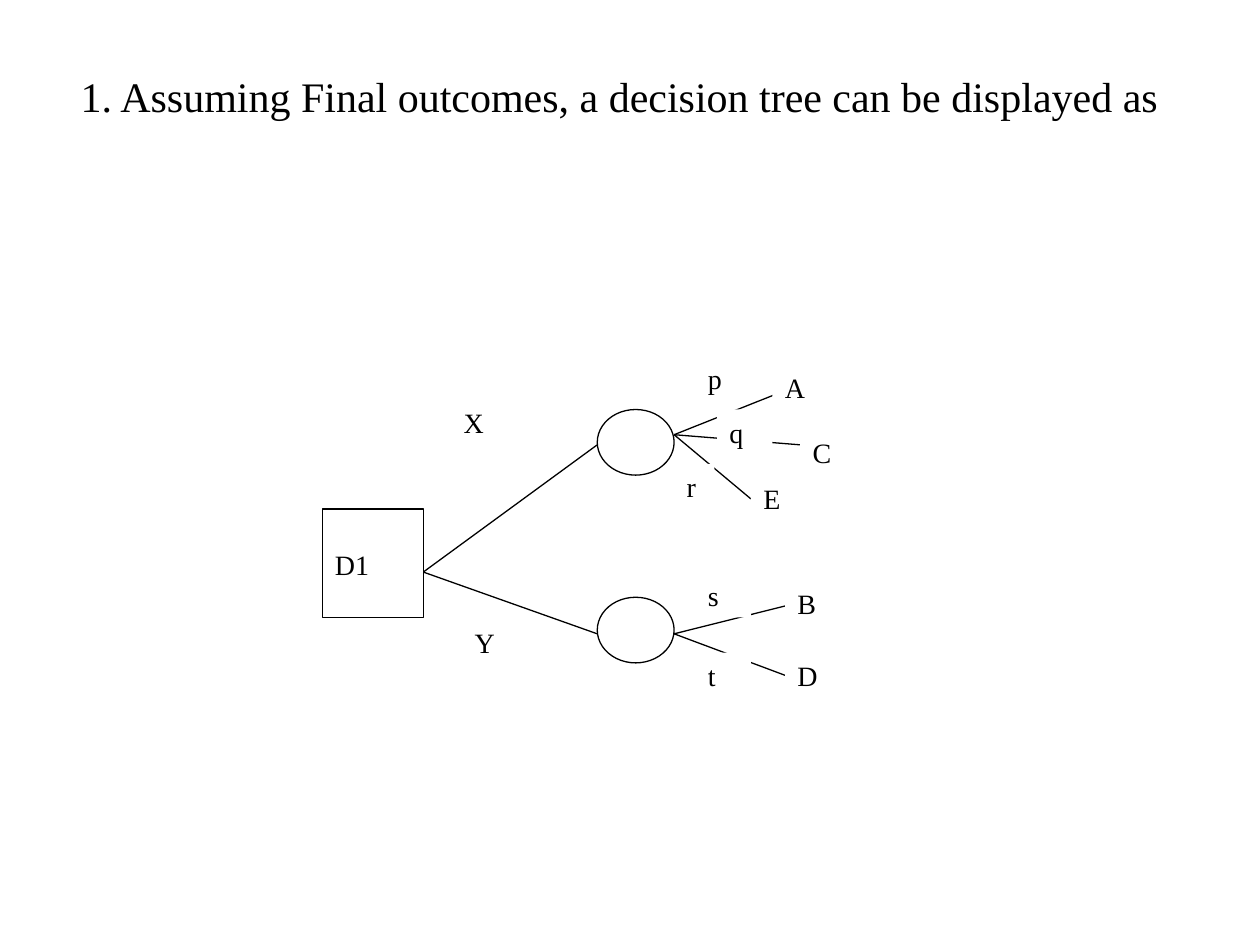
from lxml.etree import SubElement
from pptx import Presentation
from pptx.dml.color import RGBColor
from pptx.enum.shapes import MSO_CONNECTOR, MSO_SHAPE
from pptx.enum.text import MSO_ANCHOR, PP_ALIGN
from pptx.oxml.ns import qn
from pptx.util import Pt

BLACK = RGBColor(0, 0, 0)
WHITE = RGBColor(255, 255, 255)


def write_text(frame, text, *, size, font, color, align=PP_ALIGN.LEFT,
               anchor=MSO_ANCHOR.TOP, margins=(7.2, 3.6, 7.2, 3.6)):
    frame.word_wrap = True
    frame.vertical_anchor = anchor
    (frame.margin_left, frame.margin_top,
     frame.margin_right, frame.margin_bottom) = map(Pt, margins)
    paragraph = frame.paragraphs[0]
    paragraph.alignment = align
    run = paragraph.add_run()
    run.text = text
    run.font.size = Pt(size)
    run.font.name = font
    run.font.color.rgb = color


class TreeSlide:
    font = "Times New Roman"
    title_size = 24
    label_size = 16
    line_width = 0.75

    def __init__(self, deck):
        self.slide = deck.slides.add_slide(deck.slide_layouts[5])

    def title(self, text, left, top, width, height):
        heading = self.slide.shapes.title
        heading.left, heading.top = Pt(left), Pt(top)
        heading.width, heading.height = Pt(width), Pt(height)
        write_text(heading.text_frame, text, size=self.title_size, font=self.font,
                   color=BLACK, align=PP_ALIGN.CENTER, anchor=MSO_ANCHOR.MIDDLE,
                   margins=(0, 3.6, 12, 28))

    def node(self, preset, left, top, width, height, outlined=True):
        node = self.slide.shapes.add_shape(
            preset, Pt(left), Pt(top), Pt(width), Pt(height))
        node.shadow.inherit = False
        node.fill.solid()
        node.fill.fore_color.rgb = WHITE
        if outlined:
            node.line.color.rgb = BLACK
            node.line.width = Pt(self.line_width)
        else:
            node.line.fill.background()
        return node

    def decision(self, text, left, top, width, height):
        square = self.node(MSO_SHAPE.RECTANGLE, left, top, width, height)
        write_text(square.text_frame, text, size=self.label_size, font=self.font,
                   color=BLACK, margins=(7.2, 22, 7.2, 3.6))

    def chance(self, left, top):
        self.node(MSO_SHAPE.OVAL, left, top, 43.9, 37.5)

    def label(self, text, left, top, width, height=25.9):
        plate = self.node(MSO_SHAPE.RECTANGLE, left, top, width, height, outlined=False)
        write_text(plate.text_frame, text, size=self.label_size, font=self.font,
                   color=BLACK)

    def branch(self, start, end):
        branch = self.slide.shapes.add_connector(
            MSO_CONNECTOR.STRAIGHT, *map(Pt, start + end))
        branch.line.color.rgb = BLACK
        branch.line.width = Pt(self.line_width)
        SubElement(branch._element.spPr, qn("a:effectLst"))


def main():
    deck = Presentation()
    deck.slide_width, deck.slide_height = Pt(720), Pt(540)
    tree = TreeSlide(deck)
    tree.title("1. Assuming Final outcomes, a decision tree can be displayed as",
               36, 21.6, 648, 90)

    choice = (241.9, 326.9)
    upper, lower = (385.2, 248.4), (385.2, 362.2)
    for chance_entry in ((341.3, 254.2), (341.3, 362.2)):
        tree.branch(choice, chance_entry)
    for chance_top in (234, 341.3):
        tree.chance(341.3, chance_top)

    branches = {
        upper: ((448.6, 223.2), (457.2, 254.2), (429.1, 285.1)),
        lower: ((448.6, 346.3), (448.6, 385.9)),
    }
    for start, ends in branches.items():
        for end in ends:
            tree.branch(start, end)

    labels = (
        ("A", 441.4, 208.1, 47.5),
        ("C", 457.2, 245.5, 49.7),
        ("E", 429.1, 271.4, 41),
        ("B", 448.6, 331.9, 40.3),
        ("D", 448.6, 373, 40.3),
        ("p", 397.4, 203, 31.7),
        ("r", 385.2, 265, 23, 23),
        ("q", 409.7, 234, 31.7),
        ("s", 397.4, 326.9, 31.7),
        ("t", 397.4, 373, 31.7),
        ("X", 257.8, 228.2, 45.4, 31),
        ("Y", 264.2, 354.2, 28.1, 31),
    )
    for label in labels:
        tree.label(*label)
    tree.decision("D1", 184.3, 290.9, 57.6, 61.9)

    deck.save("out.pptx")


if __name__ == "__main__":
    main()
